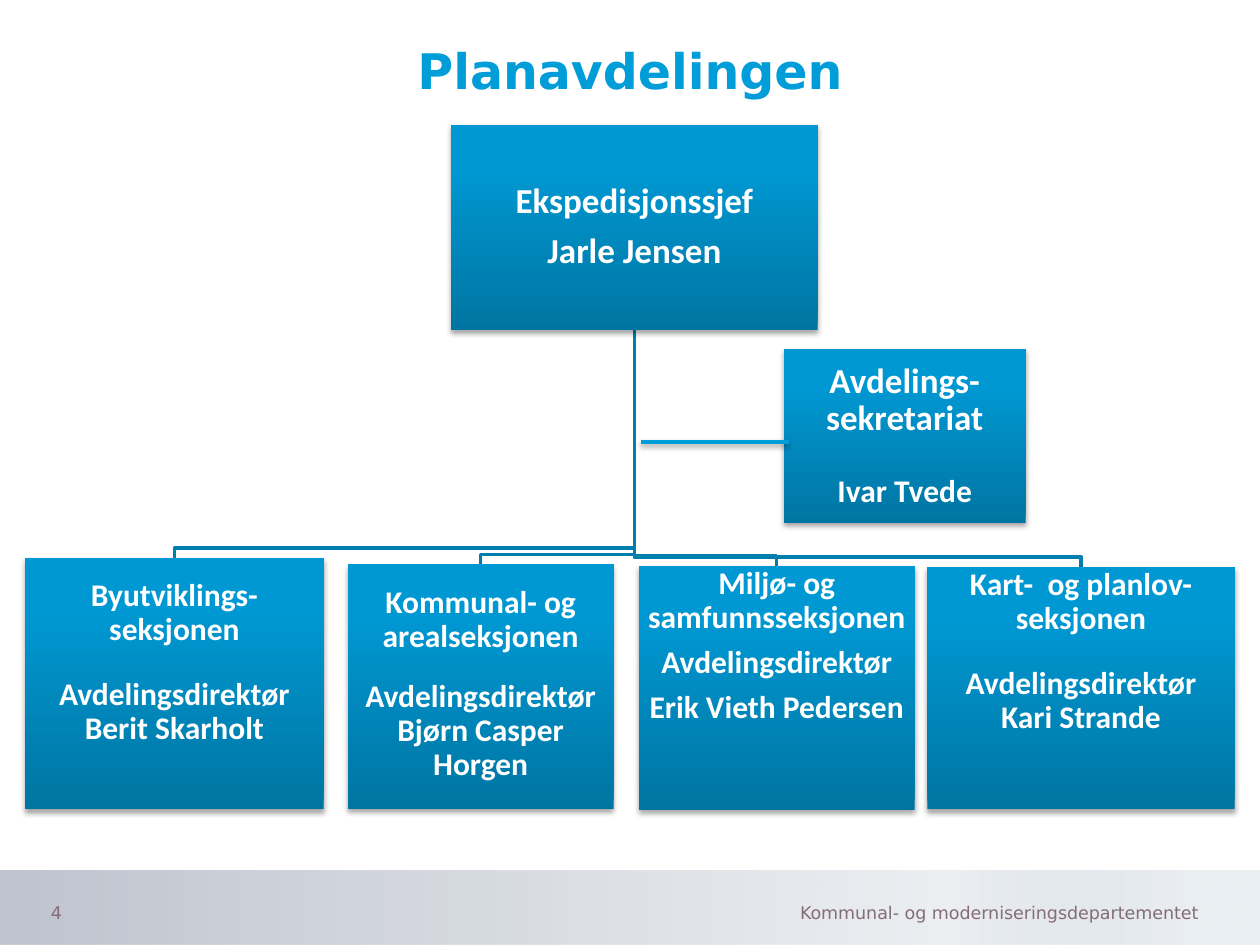
from typing import NamedTuple

from lxml.etree import SubElement
from pptx import Presentation
from pptx.dml.color import RGBColor
from pptx.enum.shapes import MSO_CONNECTOR, MSO_SHAPE
from pptx.enum.text import MSO_ANCHOR, MSO_AUTO_SIZE, PP_ALIGN
from pptx.oxml.ns import qn
from pptx.util import Inches, Pt

SLIDE_WIDTH, SLIDE_HEIGHT = Inches(10), Inches(7.5)
COLUMN, ROW = SLIDE_WIDTH / 100, SLIDE_HEIGHT / 75

WHITE = RGBColor(0xFF, 0xFF, 0xFF)
BRIGHT_BLUE = RGBColor(0x00, 0x9D, 0xD9)
LINE_BLUE = RGBColor(0x00, 0x7E, 0xAE)
FOOTER_TEXT = RGBColor(0x85, 0x6D, 0x73)
BLACK = RGBColor(0x00, 0x00, 0x00)

# Gradient stops: position, colour, opacity (all percent)
BOX_STOPS = [
    (0, RGBColor(0x00, 0x75, 0xA2), 100),
    (80, RGBColor(0x00, 0x98, 0xD2), 100),
    (100, RGBColor(0x00, 0x99, 0xD3), 100),
]
FOOTER_STOPS = [
    (0, RGBColor(0x7F, 0x89, 0x9E), 50),
    (75, RGBColor(0xD9, 0xDF, 0xE5), 48),
    (94, RGBColor(0x7C, 0x96, 0xAD), 16),
]

HEADING_FONT, BOX_FONT = "DejaVu Sans", "Calibri"
SECTION_BOTTOM = 64.25
BEND_HEIGHT = 0.8


class Box(NamedTuple):
    """An area in columns and rows of the slide grid."""
    left: float
    top: float
    width: float
    height: float

    @property
    def center(self):
        return self.left + self.width / 2

    @property
    def bottom(self):
        return self.top + self.height

    def emu(self):
        return (round(self.left * COLUMN), round(self.top * ROW),
                round(self.width * COLUMN), round(self.height * ROW))


class Entry(NamedTuple):
    """One paragraph of an organisation box."""
    text: str
    size: int = 18
    space_before: float = 0


# Left, top, width, top margin (inches) and wording of each section
SECTIONS = [
    (2, 44.3, 23.7, 0.17, [Entry("Byutviklings- seksjonen"),
                           Entry("Avdelingsdirektør\vBerit Skarholt", 18, 11.4)]),
    (27.6, 44.8, 21.1, 0.17, [Entry("Kommunal- og arealseksjonen"),
                              Entry("Avdelingsdirektør\vBjørn Casper Horgen", 18, 8.7)]),
    (50.7, 44.9, 21.9, 0.01, [Entry("Miljø- og samfunnsseksjonen"),
                              Entry("Avdelingsdirektør"),
                              Entry("Erik Vieth Pedersen")]),
    (73.6, 45, 24.4, 0.01, [Entry("Kart-  og planlov-\vseksjonen"),
                            Entry("Avdelingsdirektør\vKari Strande", 18, 11.4)]),
]


def add_color(parent, color, opacity):
    element = SubElement(parent, qn("a:srgbClr"), val=str(color))
    if opacity < 100:
        SubElement(element, qn("a:alpha"), val=str(opacity * 1000))


def fill_gradient(shape, stops, angle):
    shape.fill.gradient()
    shape.fill.gradient_angle = angle
    stop_list = shape.element.spPr.find(".//" + qn("a:gsLst"))
    for old_stop in list(stop_list):
        stop_list.remove(old_stop)
    for position, color, opacity in stops:
        stop = SubElement(stop_list, qn("a:gs"), pos=str(position * 1000))
        add_color(stop, color, opacity)


def add_shadow(shape, distance, opacity):
    effects = SubElement(shape.element.spPr, qn("a:effectLst"))
    shadow = SubElement(effects, qn("a:outerShdw"), blurRad=str(Pt(3.1)),
                        dist=str(Pt(distance)), dir="5400000", rotWithShape="0")
    add_color(shadow, BLACK, opacity)


def set_font(paragraph, name, size, color, bold=False):
    font = paragraph.font
    font.name, font.size, font.bold = name, Pt(size), bold
    font.color.rgb = color


def add_organisation_box(slide, box, entries, top_margin=0.01, anchor=MSO_ANCHOR.TOP):
    shape = slide.shapes.add_shape(MSO_SHAPE.RECTANGLE, *box.emu())
    fill_gradient(shape, BOX_STOPS, 90)
    shape.line.fill.background()
    add_shadow(shape, 1.8, 35)
    frame = shape.text_frame
    frame.word_wrap = True
    frame.vertical_anchor = anchor
    frame.margin_left = frame.margin_right = frame.margin_bottom = Inches(0.01)
    frame.margin_top = Inches(top_margin)
    for index, entry in enumerate(entries):
        paragraph = frame.add_paragraph() if index else frame.paragraphs[0]
        paragraph.text = entry.text
        paragraph.alignment = PP_ALIGN.CENTER
        paragraph.line_spacing = 0.9
        paragraph.space_before = Pt(entry.space_before)
        paragraph.space_after = Pt(0.35 * entry.size)
        set_font(paragraph, BOX_FONT, entry.size, WHITE, True)


def add_branch(slide, parent, child):
    """Draw a bent line from the parent's bottom to the child's top."""
    bend = child.top - BEND_HEIGHT
    points = [(round(x * COLUMN), round(y * ROW)) for x, y in (
        (parent.center, parent.bottom), (parent.center, bend),
        (child.center, bend), (child.center, child.top))]
    builder = slide.shapes.build_freeform(*points[0])
    builder.add_line_segments(points[1:], close=False)
    branch = builder.convert_to_shape()
    branch.fill.background()
    branch.line.color.rgb = LINE_BLUE
    branch.line.width = Pt(2)
    branch.shadow.inherit = False


def add_footer_text(slide, box, text):
    frame = slide.shapes.add_textbox(*box.emu()).text_frame
    frame.word_wrap = True
    frame.vertical_anchor = MSO_ANCHOR.MIDDLE
    paragraph = frame.paragraphs[0]
    paragraph.text = text
    paragraph.alignment = PP_ALIGN.RIGHT
    set_font(paragraph, HEADING_FONT, 10, FOOTER_TEXT)


def add_footer(slide, box):
    band = slide.shapes.add_shape(MSO_SHAPE.RECTANGLE, *box.emu())
    fill_gradient(band, FOOTER_STOPS, 0)
    band.line.fill.background()
    band.shadow.inherit = False
    add_footer_text(slide, Box(box.left + 61.4, box.top + 2, 34.7, 2.7),
                    "Kommunal- og moderniseringsdepartementet")
    add_footer_text(slide, Box(box.left, box.top + 1.4, 5.9, 3.9), "4")


def add_title(slide, box):
    title = slide.shapes.title
    title.left, title.top, title.width, title.height = box.emu()
    frame = title.text_frame
    frame.auto_size = MSO_AUTO_SIZE.NONE
    frame.vertical_anchor = MSO_ANCHOR.BOTTOM
    paragraph = frame.paragraphs[0]
    paragraph.text = "Planavdelingen"
    paragraph.alignment = PP_ALIGN.CENTER
    set_font(paragraph, HEADING_FONT, 28, BRIGHT_BLUE, True)


def add_organisation_chart(slide, director, secretariat):
    sections = [(Box(left, top, width, SECTION_BOTTOM - top), margin, entries)
                for left, top, width, margin, entries in SECTIONS]
    # Branches lie behind the boxes
    for box, _, _ in reversed(sections):
        add_branch(slide, director, box)
    add_organisation_box(slide, director, [Entry("Ekspedisjonssjef", 20),
                                           Entry("Jarle Jensen", 20)],
                         anchor=MSO_ANCHOR.MIDDLE)
    for box, margin, entries in sections:
        add_organisation_box(slide, box, entries, margin)
    add_organisation_box(slide, secretariat, [Entry("Avdelings- sekretariat", 20),
                                              Entry("Ivar Tvede", 18, 14)],
                         anchor=MSO_ANCHOR.MIDDLE)
    # Side line to the secretariat
    height = round(35.1 * ROW)
    connector = slide.shapes.add_connector(
        MSO_CONNECTOR.STRAIGHT, round((director.center + 0.5) * COLUMN), height,
        round((secretariat.left + 0.4) * COLUMN), height)
    connector.line.color.rgb = BRIGHT_BLUE
    connector.line.width = Pt(2)
    add_shadow(connector, 1.6, 38)


def main():
    presentation = Presentation()
    presentation.slide_width, presentation.slide_height = SLIDE_WIDTH, SLIDE_HEIGHT
    slide = presentation.slides.add_slide(presentation.slide_layouts[5])
    add_footer(slide, Box(0, 69.1, 100, 5.9))
    add_organisation_chart(slide, Box(35.8, 9.9, 29.1, 16.3), Box(62.2, 27.7, 19.2, 13.8))
    add_title(slide, Box(0, 0.9, 100, 7.5))
    presentation.save("out.pptx")


if __name__ == "__main__":
    main()
